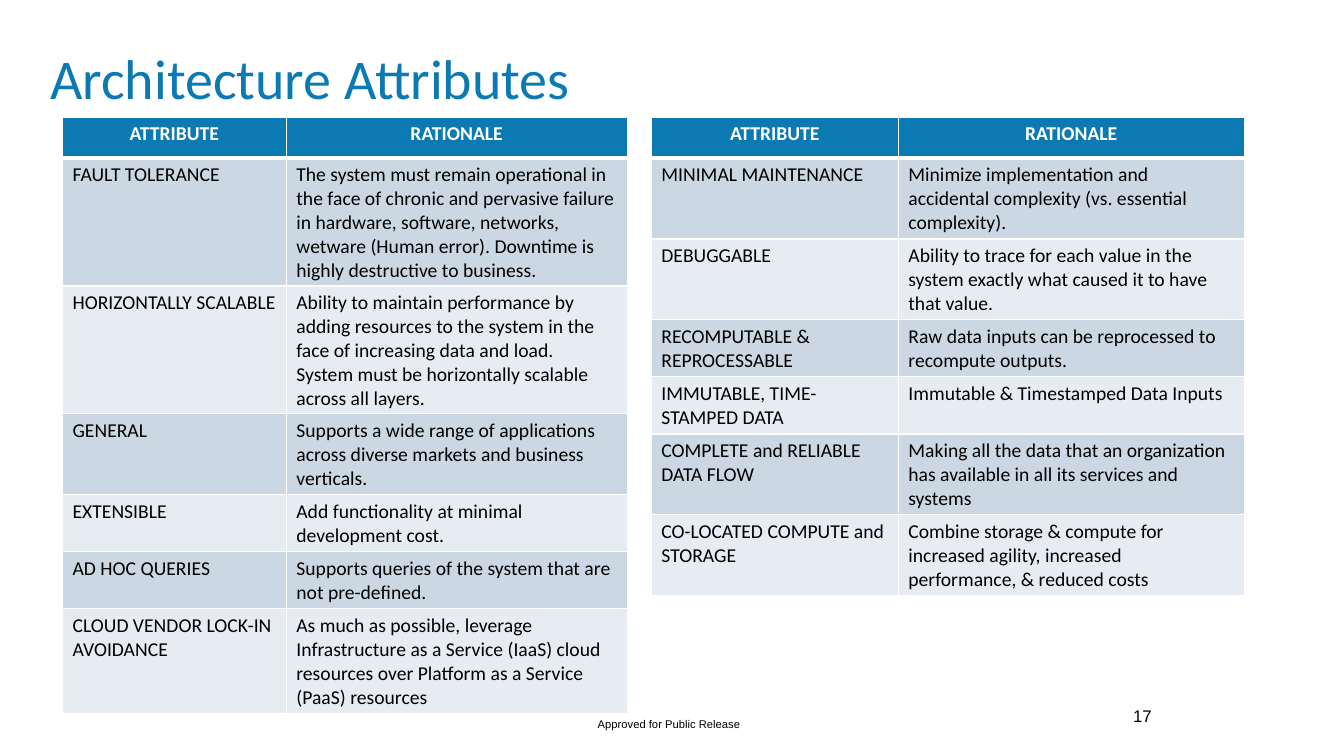
from lxml.etree import SubElement
from pptx import Presentation
from pptx.dml.color import RGBColor
from pptx.enum.text import MSO_ANCHOR as Anchor, PP_ALIGN as Align
from pptx.oxml.ns import qn
from pptx.util import Inches, Pt

FAULT_TOLERANCE = (
    "The system must remain operational in the face of chronic and pervasive failure in hardware, "
    "software, networks, wetware (Human error). Downtime is highly destructive to business."
)
SCALABLE = (
    "Ability to maintain performance by adding resources to the system in the face of increasing "
    "data and load.  System must be horizontally scalable across all layers."
)
LOCK_IN = (
    "As much as possible, leverage Infrastructure as a Service (IaaS) cloud resources over "
    "Platform as a Service (PaaS) resources"
)
HEADINGS = ("ATTRIBUTE", "RATIONALE")
SYSTEM_ATTRIBUTES = [
    HEADINGS,
    ("FAULT TOLERANCE", FAULT_TOLERANCE),
    ("HORIZONTALLY SCALABLE", SCALABLE),
    ("GENERAL", "Supports a wide range of applications across diverse markets and business verticals."),
    ("EXTENSIBLE", "Add functionality at minimal development cost."),
    ("AD HOC QUERIES", "Supports queries of the system that are not pre-defined."),
    ("CLOUD VENDOR LOCK-IN AVOIDANCE", LOCK_IN),
]
DATA_ATTRIBUTES = [
    HEADINGS,
    ("MINIMAL MAINTENANCE", "Minimize implementation and accidental complexity (vs. essential complexity)."),
    ("DEBUGGABLE", "Ability to trace for each value in the system exactly what caused it to have that value."),
    ("RECOMPUTABLE & REPROCESSABLE", "Raw data inputs can be reprocessed to recompute outputs."),
    ("IMMUTABLE, TIME-STAMPED DATA", "Immutable & Timestamped Data Inputs"),
    ("COMPLETE and RELIABLE DATA FLOW",
     "Making all the data that an organization has available in all its services and systems"),
    ("CO-LOCATED COMPUTE and STORAGE",
     "Combine storage & compute for increased agility, increased performance, & reduced costs"),
]


def rgb(color):
    return RGBColor.from_string(color)


def write(frame, text, size=14, font="Calibri", color="000000", bold=False,
          align=Align.LEFT, line_spacing=None):
    paragraph = frame.paragraphs[0]
    paragraph.alignment = align
    paragraph.line_spacing = line_spacing
    run = paragraph.add_run()
    run.text = text
    run.font.size = Pt(size)
    run.font.name = font
    run.font.bold = bold
    run.font.color.rgb = rgb(color)


class AttributeSlide:
    accent = "0C7AB2"
    white = "FFFFFF"
    bands = ("E7ECF2", "CCD7E4")

    def __init__(self, deck):
        self.slide = deck.slides.add_slide(deck.slide_layouts[6])

    def label(self, text, left, top, width, height, anchor=Anchor.TOP, **style):
        box = self.slide.shapes.add_textbox(Inches(left), Inches(top), Inches(width), Inches(height))
        box.text_frame.word_wrap = True
        box.text_frame.vertical_anchor = anchor
        write(box.text_frame, text, **style)

    def borders(self, cell, bottom):
        properties = cell._tc.get_or_add_tcPr()
        for place, (side, points) in enumerate([("L", 1), ("R", 1), ("T", 1), ("B", bottom)]):
            line = SubElement(properties, qn(f"a:ln{side}"), w=str(Pt(points)))
            fill = SubElement(line, qn("a:solidFill"))
            SubElement(fill, qn("a:srgbClr"), val=self.white)
            properties.insert(place, line)

    def table(self, entries, left, top, widths, heights):
        table = self.slide.shapes.add_table(
            len(entries), len(widths), Inches(left), Inches(top),
            Inches(sum(widths)), Inches(sum(heights))).table
        for column, width in zip(table.columns, widths):
            column.width = Inches(width)
        for row, height in zip(table.rows, heights):
            row.height = Inches(height)
        for row_number, entry in enumerate(entries):
            heading = row_number == 0
            for column_number, text in enumerate(entry):
                cell = table.cell(row_number, column_number)
                cell.fill.solid()
                cell.fill.fore_color.rgb = rgb(self.accent if heading else self.bands[row_number % 2])
                self.borders(cell, bottom=3 if heading else 1)
                write(cell.text_frame, text, bold=heading,
                      color=self.white if heading else "000000",
                      align=Align.CENTER if heading else Align.LEFT)


def main():
    deck = Presentation()
    deck.slide_width = Inches(13.33)
    deck.slide_height = Inches(7.5)
    page = AttributeSlide(deck)
    page.label("Approved for Public Release", 5.83, 7.07, 1.66, 0.24, size=8, font="Arial")
    page.label("Architecture Attributes", 0.4, 0.08, 11.5, 1.45, anchor=Anchor.MIDDLE,
               size=40, color=page.accent, line_spacing=0.9)
    page.table(SYSTEM_ATTRIBUTES, 0.62, 1.16, (2.22, 3.38), [0.41] * 7)
    page.label("17", 11.14, 6.95, 0.46, 0.4, size=12, font="Arial")
    page.table(DATA_ATTRIBUTES, 6.46, 1.16, (2.45, 3.43), [0.41] * 3 + [0.5] * 2 + [0.41] * 2)
    deck.save("out.pptx")


if __name__ == "__main__":
    main()
